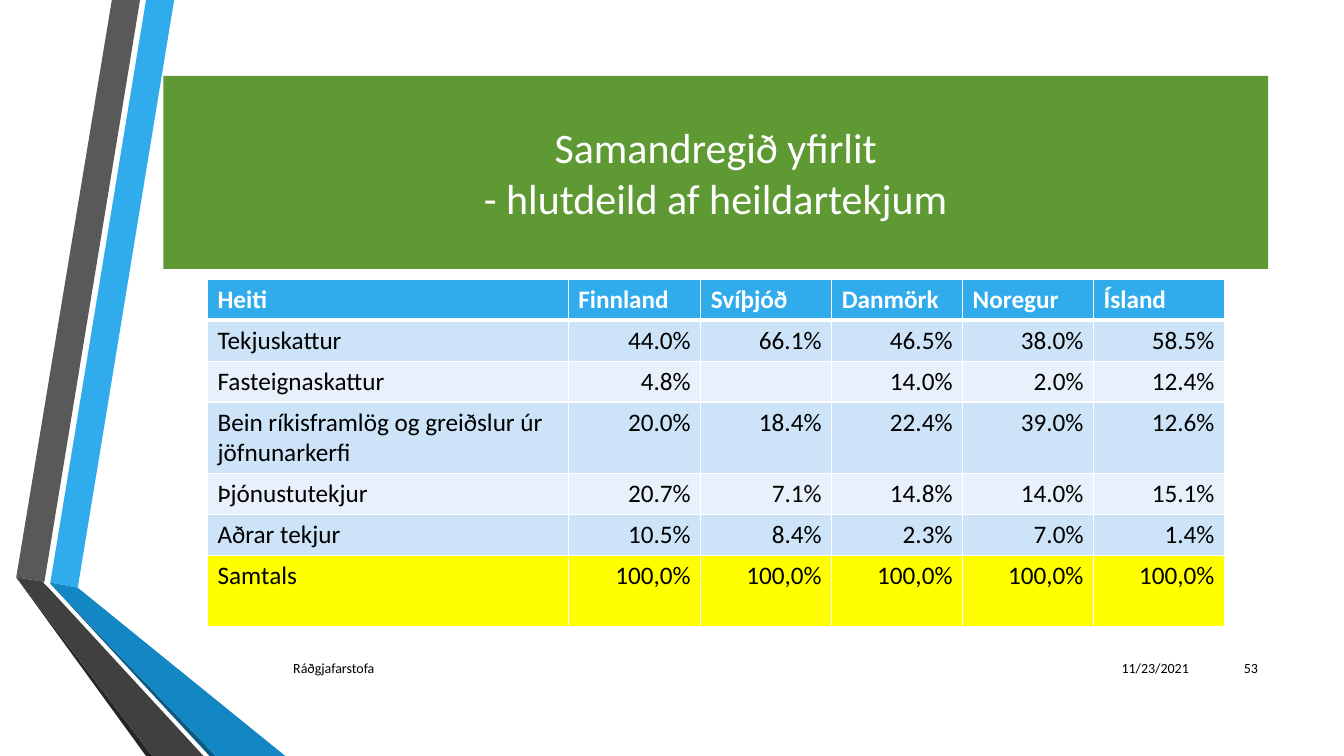
from dataclasses import dataclass

from lxml import etree
from pptx import Presentation
from pptx import util as u
from pptx.dml.color import RGBColor
from pptx.enum import shapes, text
from pptx.oxml import ns


@dataclass(frozen=True)
class Theme:
    font: str = "Calibri"
    title_size: int = 30
    table_size: int = 18
    footer_size: int = 10
    white: str = "FFFFFF"
    black: str = "000000"
    banner: str = "5F9934"
    header: str = "30ACEC"
    band_dark: str = "CDE3F8"
    band_light: str = "E8F1FB"
    total: str = "FFFF00"
    blue: str = "30ACEC"
    blue_fold: str = "1287C3"
    blue_edge: str = "0C5A82"
    grey: str = "595959"
    grey_fold: str = "404040"
    grey_edge: str = "262626"


THEME = Theme()
LEFT, CENTER, RIGHT = text.PP_ALIGN.LEFT, text.PP_ALIGN.CENTER, text.PP_ALIGN.RIGHT

# Ribbon outlines in hundredths of a centimetre, back to front
RIBBONS = [
    (THEME.blue, [(127, 1468), (196, 1481), (439, 0), (368, 0)]),
    (THEME.grey, [(353, 0), (282, 0), (41, 1455), (112, 1466)]),
    (THEME.grey_edge, [(41, 1455), (368, 1905), (384, 1905)]),
    (THEME.blue_edge, [(127, 1471), (528, 1905), (544, 1905)]),
    (THEME.blue_fold, [(127, 1471), (544, 1905), (719, 1905), (196, 1481), (127, 1468)]),
    (THEME.grey_fold, [(513, 1905), (122, 1481), (109, 1468), (112, 1466),
                       (41, 1455), (384, 1905)]),
]

REVENUE = [
    ["Heiti", "Finnland", "Svíþjóð", "Danmörk", "Noregur", "Ísland"],
    ["Tekjuskattur", "44.0%", "66.1%", "46.5%", "38.0%", "58.5%"],
    ["Fasteignaskattur", "4.8%", "", "14.0%", "2.0%", "12.4%"],
    ["Bein ríkisframlög og greiðslur úr jöfnunarkerfi",
     "20.0%", "18.4%", "22.4%", "39.0%", "12.6%"],
    ["Þjónustutekjur", "20.7%", "7.1%", "14.8%", "14.0%", "15.1%"],
    ["Aðrar tekjur", "10.5%", "8.4%", "2.3%", "7.0%", "1.4%"],
    ["Samtals"] + ["100,0%"] * 5,
]
COLUMN_WIDTHS = [9.09, 3.34, 3.3, 3.3, 3.3, 3.3]
ROW_HEIGHTS = [1.03, 1.03, 1.03, 1.81, 1.03, 1.03, 1.79]


def paint(part, color):
    part.fill.solid()
    part.fill.fore_color.rgb = RGBColor.from_string(color)


def write(frame, words, size, color, align, bold=False):
    paragraph = frame.paragraphs[0]
    paragraph.text = words
    paragraph.alignment = align
    font_format = {"name": THEME.font, "size": u.Pt(size), "bold": bold}
    for font in [paragraph.font] + [run.font for run in paragraph.runs]:
        for key, value in font_format.items():
            setattr(font, key, value)
        font.color.rgb = RGBColor.from_string(color)


def draw_borders(cell, widths):
    """Give a cell white borders; widths maps each side to points."""
    properties = cell._tc.get_or_add_tcPr()
    for side, points in widths.items():
        line = etree.SubElement(properties, ns.qn(f"a:ln{side}"), w=str(u.Pt(points)))
        solid = etree.SubElement(line, ns.qn("a:solidFill"))
        etree.SubElement(solid, ns.qn("a:srgbClr"), val=THEME.white)


def add_ribbons(slide, left, top):
    for color, outline in RIBBONS:
        builder = slide.shapes.build_freeform(*outline[0], scale=u.Cm(0.01))
        builder.add_line_segments(outline[1:], close=True)
        ribbon = builder.convert_to_shape(u.Cm(left), u.Cm(top))
        ribbon.shadow.inherit = False
        ribbon.line.fill.background()
        paint(ribbon, color)


def add_banner(slide, left, top, width, height):
    banner = slide.shapes.add_shape(
        shapes.MSO_SHAPE.RECTANGLE, *map(u.Cm, (left, top, width, height)))
    banner.shadow.inherit = False
    banner.line.fill.background()
    paint(banner, THEME.banner)
    banner.text_frame.vertical_anchor = text.MSO_ANCHOR.MIDDLE
    write(banner.text_frame, "Samandregið yfirlit\v- hlutdeild af heildartekjum",
          THEME.title_size, THEME.white, CENTER)


def row_fill(row):
    if row == 0:
        return THEME.header
    if row == len(REVENUE) - 1:
        return THEME.total
    return THEME.band_dark if row % 2 else THEME.band_light


def add_revenue_table(slide, left, top):
    table = slide.shapes.add_table(
        len(REVENUE), len(COLUMN_WIDTHS), u.Cm(left), u.Cm(top),
        u.Cm(sum(COLUMN_WIDTHS)), u.Cm(sum(ROW_HEIGHTS))).table
    for column, width in zip(table.columns, COLUMN_WIDTHS):
        column.width = u.Cm(width)
    for row, height in zip(table.rows, ROW_HEIGHTS):
        row.height = u.Cm(height)

    for r, values in enumerate(REVENUE):
        heading = r == 0
        for c, value in enumerate(values):
            cell = table.cell(r, c)
            draw_borders(cell, {"L": 1, "R": 1, "T": 3 if r == 1 else 1,
                                "B": 3 if heading else 1})
            paint(cell, row_fill(r))
            write(cell.text_frame, value, THEME.table_size,
                  THEME.white if heading else THEME.black,
                  LEFT if heading or c == 0 else RIGHT, bold=heading)


def add_footer(slide, left, top, height):
    # Offset from the left edge, width, wording, alignment
    entries = [
        (19.89, 3.18, "11/23/2021", RIGHT),
        (0, 19.69, "Ráðgjafarstofa", LEFT),
        (23.29, 1.52, "53", RIGHT),
    ]
    for offset, width, words, align in entries:
        frame = slide.shapes.add_textbox(
            *map(u.Cm, (left + offset, top, width, height))).text_frame
        frame.word_wrap = True
        frame.vertical_anchor = text.MSO_ANCHOR.MIDDLE
        write(frame, words, THEME.footer_size, THEME.black, align)


def main():
    deck = Presentation()
    deck.slide_width, deck.slide_height = u.Cm(33.87), u.Cm(19.05)
    slide = deck.slides.add_slide(deck.slide_layouts[6])
    add_ribbons(slide, 0, 0)
    add_banner(slide, 4.12, 1.91, 27.84, 4.87)
    add_revenue_table(slide, 5.23, 7.04)
    add_footer(slide, 7.14, 16.33, 1.02)
    deck.save("out.pptx")


if __name__ == "__main__":
    main()
